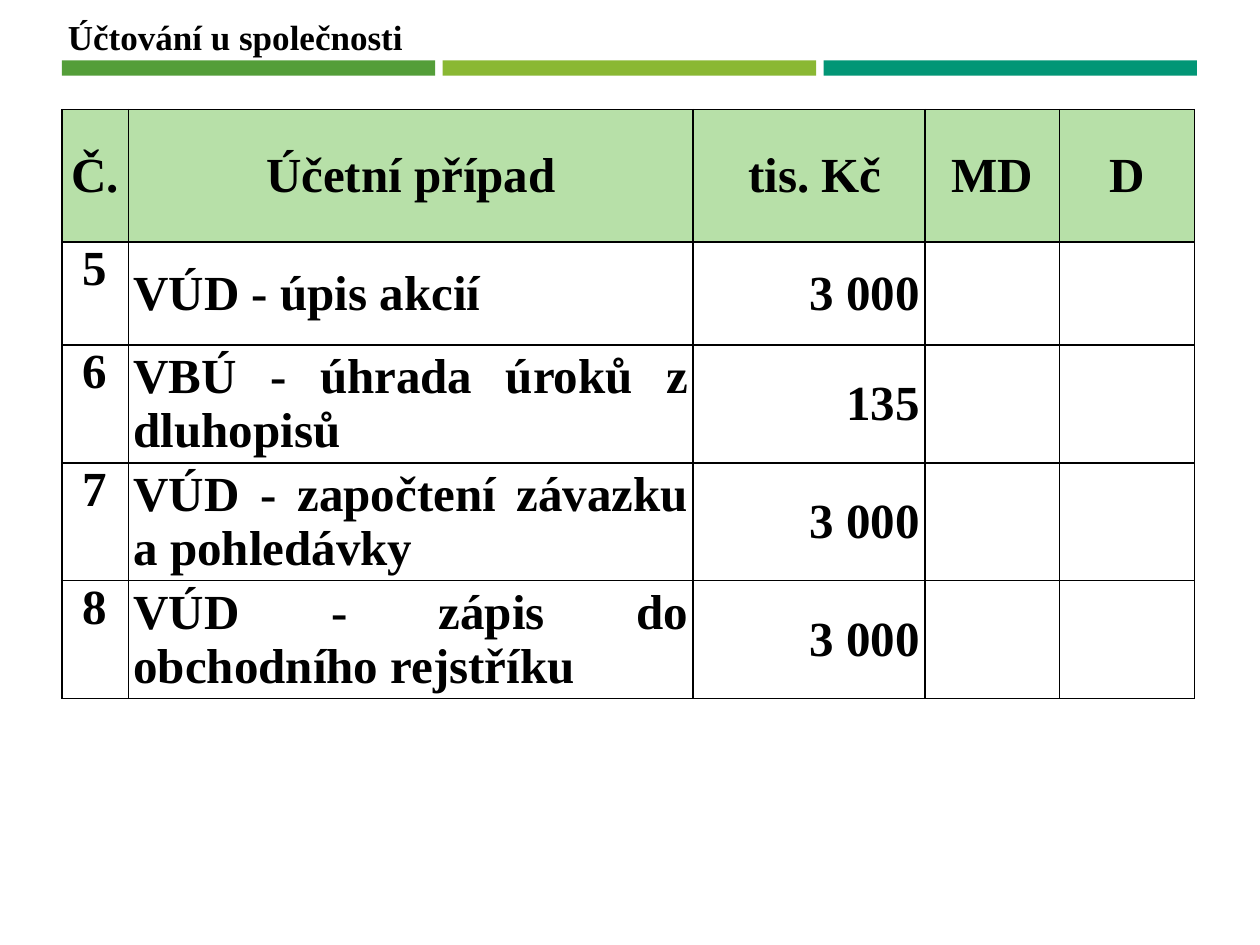
from dataclasses import dataclass
from lxml.etree import SubElement
from pptx import Presentation
from pptx.dml.color import RGBColor as Rgb
from pptx.enum.shapes import MSO_SHAPE as Kind
from pptx.enum.text import MSO_ANCHOR as Anchor, MSO_AUTO_SIZE as Fit, PP_ALIGN as Align
from pptx.oxml.ns import qn
from pptx.util import Inches, Pt


@dataclass(frozen=True)
class Theme:
    face: str = "Times New Roman"
    ink: str = "000000"
    head: str = "B7E0A8"
    bars: tuple = ("549E39", "8AB833", "029676")
    title: int = 20
    body: int = 28
    line: int = 1


class Deck:
    def __init__(self, theme):
        self.theme = theme
        self.prs = Presentation()
        self.prs.slide_width = Inches(10)
        self.prs.slide_height = Inches(7.5)
        self.slide = self.prs.slides.add_slide(self.prs.slide_layouts[6])

    def label(self, frame, text, size, align=Align.LEFT):
        par = frame.paragraphs[0]
        par.text = text
        par.alignment = align
        font = par.font
        font.name, font.size, font.bold = self.theme.face, Pt(size), True
        font.color.rgb = Rgb.from_string(self.theme.ink)

    def bar(self, x, y, w, h, color):
        box = self.slide.shapes.add_shape(Kind.RECTANGLE, Inches(x), Inches(y), Inches(w), Inches(h))
        box.shadow.inherit = False
        box.fill.solid()
        box.fill.fore_color.rgb = Rgb.from_string(color)
        box.line.fill.background()

    def title(self, x, y, w, h, text):
        frame = self.slide.shapes.add_textbox(Inches(x), Inches(y), Inches(w), Inches(h)).text_frame
        frame.word_wrap = False
        frame.auto_size = Fit.SHAPE_TO_FIT_TEXT
        self.label(frame, text, self.theme.title)

    def border(self, cell):
        props = cell._tc.get_or_add_tcPr()
        for at, side in enumerate(("lnL", "lnR", "lnT", "lnB")):
            line = props.makeelement(qn(f"a:{side}"), {"w": str(Pt(self.theme.line))})
            fill = SubElement(line, qn("a:solidFill"))
            SubElement(fill, qn("a:srgbClr"), val=self.theme.ink)
            props.insert(at, line)

    def cell(self, cell, text, align, anchor, fill=None):
        cell.margin_left = cell.margin_right = Inches(0.04)
        cell.margin_top = cell.margin_bottom = 0
        cell.vertical_anchor = anchor
        if fill:
            cell.fill.solid()
            cell.fill.fore_color.rgb = Rgb.from_string(fill)
        else:
            cell.fill.background()
        self.border(cell)
        if text:
            self.label(cell.text_frame, text, self.theme.body, align)

    def table(self, x, y, cols, rows, data, aligns):
        grid = self.slide.shapes.add_table(
            len(rows), len(cols), Inches(x), Inches(y), Inches(sum(cols)), Inches(sum(rows))
        ).table
        grid.first_row = grid.horz_banding = False
        for col, wide in zip(grid.columns, cols):
            col.width = Inches(wide)
        for row, high in zip(grid.rows, rows):
            row.height = Inches(high)
        for r, line in enumerate(data):
            for c, text in enumerate(line):
                if r == 0:
                    look = Align.CENTER, Anchor.MIDDLE, self.theme.head
                else:
                    look = aligns[c], Anchor.MIDDLE if c else Anchor.TOP
                self.cell(grid.cell(r, c), text, *look)


def main():
    theme = Theme()
    deck = Deck(theme)
    left, span, gap = 0.49, 9.01, 0.06
    count = len(theme.bars)
    wide = (span - gap * (count - 1)) / count
    for i, color in enumerate(theme.bars):
        deck.bar(left + i * (wide + gap), 0.48, wide, 0.12, color)
    deck.title(0.44, 0.07, 2.88, 0.44, "Účtování u společnosti")
    data = [
        ("Č.", "Účetní případ", " tis. Kč", "MD", "D"),
        ("5", "VÚD - úpis akcií", "3 000", "", ""),
        ("6", "VBÚ - úhrada úroků z dluhopisů", "135", "", ""),
        ("7", "VÚD - započtení závazku a pohledávky", "3 000", "", ""),
        ("8", "VÚD - zápis do obchodního rejstříku", "3 000", "", ""),
    ]
    cols = [0.53, 4.48, 1.84, 1.07, 1.07]
    rows = [1.05, 0.82] + [0.93] * 3
    aligns = [Align.CENTER, Align.JUSTIFY, Align.RIGHT, Align.LEFT, Align.LEFT]
    deck.table(left, 0.87, cols, rows, data, aligns)
    deck.prs.save("out.pptx")


if __name__ == "__main__":
    main()
